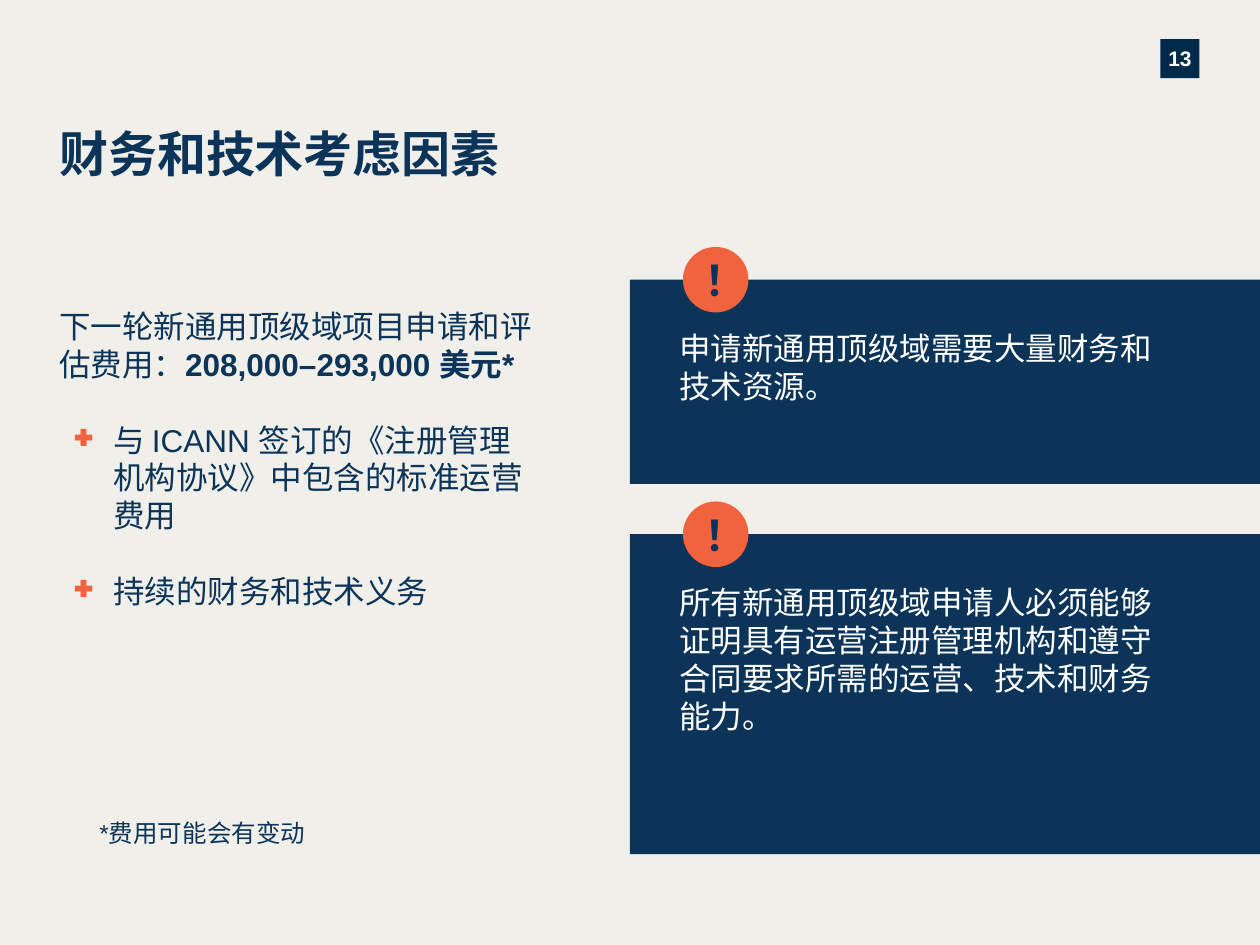
import lxml.etree
import pptx
import pptx.dml.color
import pptx.enum.lang
import pptx.enum.shapes
import pptx.enum.text
import pptx.oxml.ns
import pptx.util

Inches = pptx.util.Inches
Pt = pptx.util.Pt
Shape = pptx.enum.shapes.MSO_SHAPE
Align = pptx.enum.text.PP_ALIGN
Anchor = pptx.enum.text.MSO_ANCHOR

NO_INSETS = (0, 0, 0, 0)
DEFAULT_INSETS = (0.1, 0.05, 0.1, 0.05)


def color(hex_string):
    return pptx.dml.color.RGBColor.from_string(hex_string)


def add_run(paragraph, text, size=18, ink="0B3458", bold=False):
    run = paragraph.add_run()
    run.text = text
    font = run.font
    font.name = "Arial"
    font.size = Pt(size)
    font.bold = bold
    font.color.rgb = color(ink)
    font.language_id = pptx.enum.lang.MSO_LANGUAGE_ID.SIMPLIFIED_CHINESE


class SlideBuilder:
    navy = "0B3458"
    dark_navy = "002A49"
    orange = "F1633E"
    cream = "F1EFEA"
    white = "FFFFFF"

    def __init__(self, slide):
        self.slide = slide
        background = slide.background.fill
        background.solid()
        background.fore_color.rgb = color(self.cream)

    def prepare_frame(self, shape, insets, anchor):
        frame = shape.text_frame
        frame.word_wrap = True
        frame.vertical_anchor = anchor
        (frame.margin_left, frame.margin_top,
         frame.margin_right, frame.margin_bottom) = map(Inches, insets)
        return frame

    def text_box(self, bounds, text, insets=NO_INSETS, **text_format):
        box = self.slide.shapes.add_textbox(*map(Inches, bounds))
        frame = self.prepare_frame(box, insets, Anchor.TOP)
        add_run(frame.paragraphs[0], text, **text_format)
        return frame

    def filled_shape(self, kind, bounds, fill, text, insets=NO_INSETS,
                     anchor=Anchor.MIDDLE, align=Align.CENTER, **text_format):
        shape = self.slide.shapes.add_shape(kind, *map(Inches, bounds))
        shape.shadow.inherit = False
        shape.fill.solid()
        shape.fill.fore_color.rgb = color(fill)
        shape.line.fill.background()
        paragraph = self.prepare_frame(shape, insets, anchor).paragraphs[0]
        paragraph.alignment = align
        add_run(paragraph, text, **text_format)

    def bullet(self, frame, text):
        paragraph = frame.add_paragraph()
        paragraph.space_before = Pt(21.5)
        properties = paragraph._p.get_or_add_pPr()
        properties.set("marL", str(Inches(0.43)))
        properties.set("indent", str(Inches(-0.31)))
        qn = pptx.oxml.ns.qn
        bullet_color = lxml.etree.SubElement(properties, qn("a:buClr"))
        lxml.etree.SubElement(bullet_color, qn("a:srgbClr"), val=self.orange)
        lxml.etree.SubElement(properties, qn("a:buChar"), char="✚")
        add_run(paragraph, text)

    def callout(self, top, height, text):
        """Draw a navy panel with a round warning badge on its top edge."""
        badge_size = 0.52
        self.filled_shape(Shape.RECTANGLE, (5, top, 5, height), self.navy, text,
                          insets=(0.39, 0.39, 0.67, 0.3), anchor=Anchor.TOP,
                          align=Align.LEFT, ink=self.white)
        self.filled_shape(Shape.OVAL,
                          (5.42, top - badge_size / 2, badge_size, badge_size),
                          self.orange, "！", insets=DEFAULT_INSETS,
                          size=24, bold=True)


def main():
    presentation = pptx.Presentation()
    presentation.slide_width = Inches(10)
    presentation.slide_height = Inches(7.5)
    builder = SlideBuilder(
        presentation.slides.add_slide(presentation.slide_layouts[6]))

    builder.filled_shape(Shape.RECTANGLE, (9.21, 0.31, 0.31, 0.31),
                         builder.dark_navy, "13", size=12, ink=builder.white,
                         bold=True)
    builder.text_box((0.47, 0.98, 7.19, 1.09), "财务和技术考虑因素",
                     size=28, bold=True)

    costs = builder.text_box((0.47, 2.44, 3.83, 4.26),
                             "下一轮新通用顶级域项目申请和评估费用：")
    add_run(costs.paragraphs[0], "208,000–293,000 美元*", bold=True)
    for text in ("与 ICANN 签订的《注册管理机构协议》中包含的标准运营费用",
                 "持续的财务和技术义务"):
        builder.bullet(costs, text)

    builder.callout(4.24, 2.54, "所有新通用顶级域申请人必须能够证明具有运营"
                    "注册管理机构和遵守合同要求所需的运营、技术和财务能力。")
    builder.callout(2.22, 1.62, "申请新通用顶级域需要大量财务和技术资源。")
    builder.text_box((0.69, 6.44, 3.62, 0.34), "*费用可能会有变动",
                     insets=DEFAULT_INSETS, size=14)

    presentation.save("out.pptx")


if __name__ == "__main__":
    main()
